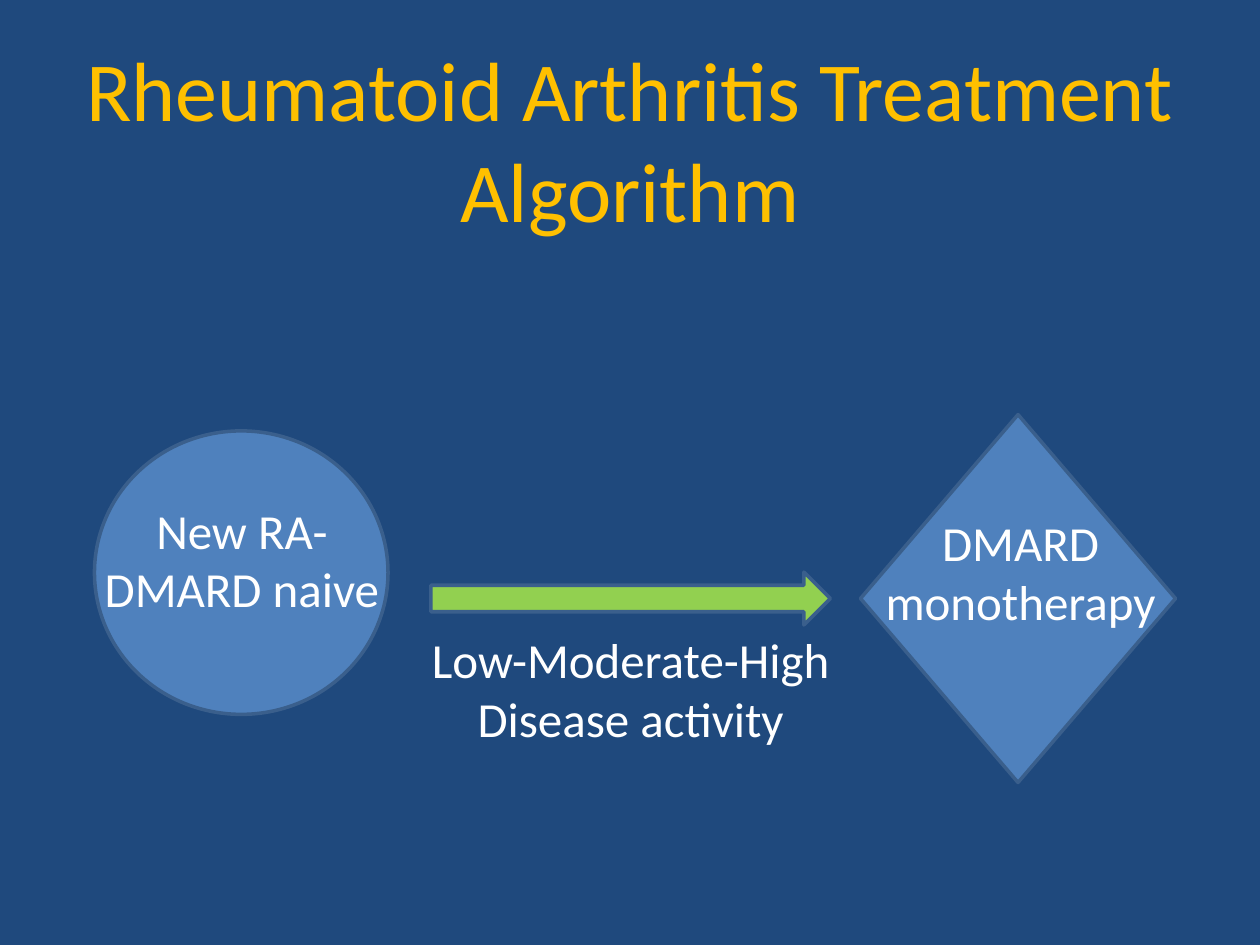
from dataclasses import dataclass

from pptx import Presentation
from pptx.dml.color import RGBColor
from pptx.enum import shapes, text
from pptx.util import Inches, Pt


@dataclass(frozen=True)
class Theme:
    background: str = "1F497D"
    title: str = "FFC000"
    label: str = "FFFFFF"
    node: str = "4F81BD"
    arrow: str = "92D050"
    outline: str = "3A5F8C"
    font: str = "Calibri"
    title_size: int = 48
    label_size: int = 28
    outline_width: int = 2


THEME = Theme()


def color(value):
    return RGBColor.from_string(value)


def write_text(shape, content, size=THEME.label_size, fill=THEME.label):
    """Put one centred, wrapping paragraph in a shape."""
    frame = shape.text_frame
    frame.word_wrap = True
    frame.auto_size = text.MSO_AUTO_SIZE.NONE
    frame.vertical_anchor = text.MSO_ANCHOR.TOP
    paragraph = frame.paragraphs[0]
    paragraph.alignment = text.PP_ALIGN.CENTER
    run = paragraph.add_run()
    run.text = content
    run.font.name = THEME.font
    run.font.size = Pt(size)
    run.font.color.rgb = color(fill)


def add_title(slide, content, left, top, width, height):
    title = slide.shapes.title
    title.left, title.top = Inches(left), Inches(top)
    title.width, title.height = Inches(width), Inches(height)
    write_text(title, content, size=THEME.title_size, fill=THEME.title)


def add_figure(slide, kind, left, top, width, height, fill=THEME.node):
    shape = slide.shapes.add_shape(
        kind, Inches(left), Inches(top), Inches(width), Inches(height))
    shape.shadow.inherit = False
    shape.fill.solid()
    shape.fill.fore_color.rgb = color(fill)
    shape.line.color.rgb = color(THEME.outline)
    shape.line.width = Pt(THEME.outline_width)


def add_label(slide, content, left, top, width, height=1.04):
    box = slide.shapes.add_textbox(
        Inches(left), Inches(top), Inches(width), Inches(height))
    write_text(box, content)


def main():
    presentation = Presentation()
    presentation.slide_width, presentation.slide_height = Inches(10), Inches(7.5)
    title_only = presentation.slide_layouts[5]
    slide = presentation.slides.add_slide(title_only)
    slide.background.fill.solid()
    slide.background.fill.fore_color.rgb = color(THEME.background)

    add_title(slide, "Rheumatoid Arthritis Treatment Algorithm", 0, 0.25, 10, 1.72)

    # Starting patient group
    add_figure(slide, shapes.MSO_SHAPE.OVAL, 0.75, 3.42, 2.33, 2.25)
    add_label(slide, "New RA-DMARD naive", 0.67, 3.92, 2.5)

    # Treatment, and the disease activity that leads to it
    add_figure(slide, shapes.MSO_SHAPE.DIAMOND, 6.83, 3.29, 2.5, 2.92)
    add_figure(slide, shapes.MSO_SHAPE.RIGHT_ARROW, 3.42, 4.54, 3.17, 0.42,
               fill=THEME.arrow)
    add_label(slide, "Low-Moderate-High Disease activity", 2.88, 4.95, 4.25)
    add_label(slide, "DMARD monotherapy", 6.85, 4.02, 2.5)

    presentation.save("out.pptx")


if __name__ == "__main__":
    main()
